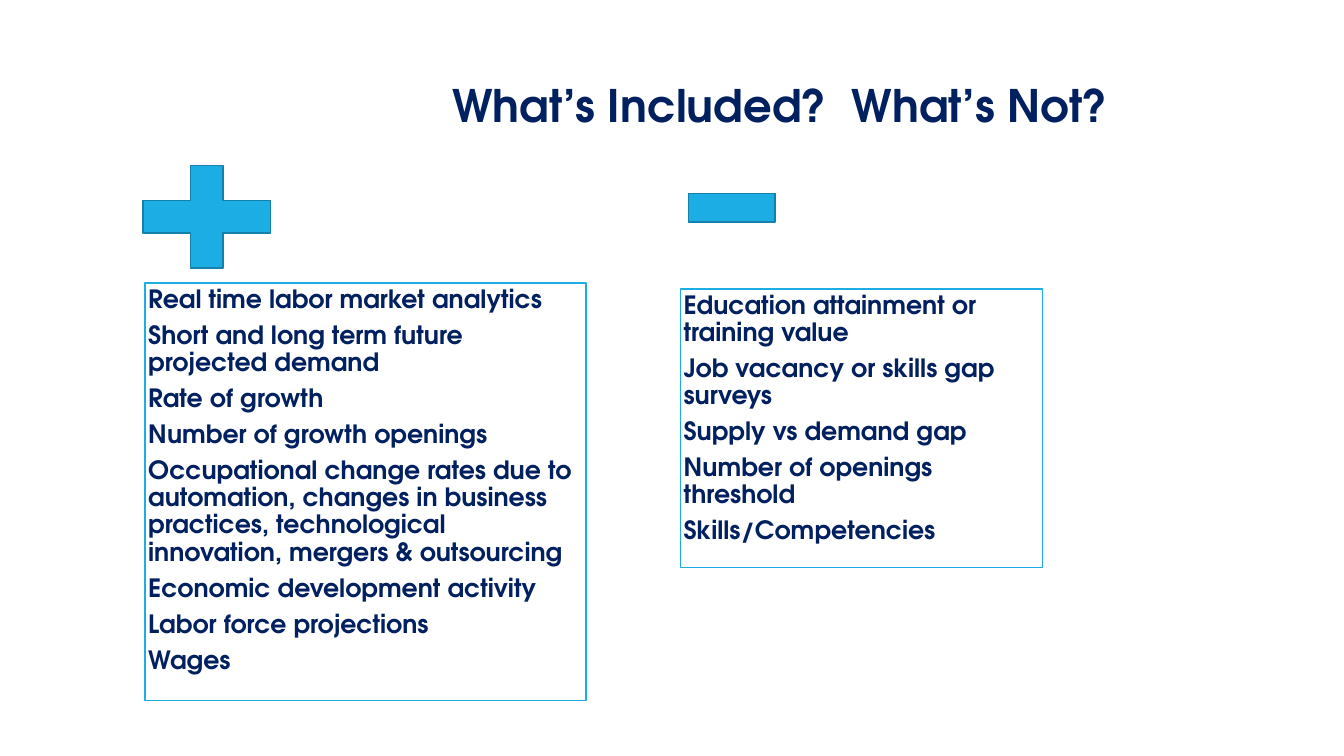
from dataclasses import dataclass

from pptx import Presentation
from pptx.dml.color import RGBColor
from pptx.enum.shapes import MSO_SHAPE
from pptx.enum.text import MSO_ANCHOR, PP_ALIGN
from pptx.util import Inches, Pt

PLUS, MINUS, RECT = MSO_SHAPE.MATH_PLUS, MSO_SHAPE.MATH_MINUS, MSO_SHAPE.RECTANGLE
TOP, LEFT = MSO_ANCHOR.TOP, PP_ALIGN.LEFT

INCLUDED = [
    "Real time labor market analytics",
    "Short and long term future projected demand",
    "Rate of growth",
    "Number of growth openings",
    "Occupational change rates due to automation, changes in business "
    "practices, technological innovation, mergers & outsourcing",
    "Economic development activity",
    "Labor force projections",
    "Wages",
]
NOT_INCLUDED = [
    "Education attainment or training value",
    "Job vacancy or skills gap surveys",
    "Supply vs demand gap",
    "Number of openings threshold",
    "Skills/Competencies",
]


@dataclass(frozen=True)
class Theme:
    font: str = "TeX Gyre Adventor"
    navy: RGBColor = RGBColor(0x00, 0x20, 0x60)
    blue: RGBColor = RGBColor(0x1C, 0xAD, 0xE4)
    edge: RGBColor = RGBColor(0x15, 0x80, 0xA9)
    title_size: float = 32
    body_size: float = 18
    sign_line: float = 1
    box_line: float = 1.25
    inset: float = 0.03
    line_spacing: float = 0.9
    space_after: float = 0.35


class SlideBuilder:
    def __init__(self, prs, theme):
        self.prs = prs
        self.theme = theme
        self.slide = prs.slides.add_slide(prs.slide_layouts[6])

    def place(self, x, y, w, h):
        width, height = self.prs.slide_width, self.prs.slide_height
        shares = ((x, width), (y, height), (w, width), (h, height))
        return [round(share * full / 100) for share, full in shares]

    def set_paragraph(self, p, text, size):
        p.text = text
        p.alignment = LEFT
        for r in p.runs:
            r.font.name = self.theme.font
            r.font.size = Pt(size)
            r.font.bold = True
            r.font.color.rgb = self.theme.navy

    def title(self, text, *area):
        tf = self.slide.shapes.add_textbox(*self.place(*area)).text_frame
        tf.word_wrap = True
        self.set_paragraph(tf.paragraphs[0], text, self.theme.title_size)

    def shape(self, kind, area, line_color, line_width):
        sp = self.slide.shapes.add_shape(kind, *self.place(*area))
        sp.shadow.inherit = False
        sp.line.color.rgb = line_color
        sp.line.width = Pt(line_width)
        return sp

    def sign(self, kind, *area):
        sp = self.shape(kind, area, self.theme.edge, self.theme.sign_line)
        sp.fill.solid()
        sp.fill.fore_color.rgb = self.theme.blue

    def list_box(self, items, *area):
        theme = self.theme
        sp = self.shape(RECT, area, theme.blue, theme.box_line)
        sp.fill.background()
        tf = sp.text_frame
        tf.word_wrap = True
        tf.vertical_anchor = TOP
        tf.margin_left = tf.margin_right = Inches(theme.inset)
        tf.margin_top = tf.margin_bottom = Inches(theme.inset)
        tf.text = "\n".join(items)
        for p, item in zip(tf.paragraphs, items):
            self.set_paragraph(p, item, theme.body_size)
            p.line_spacing = theme.line_spacing
            p.space_after = Pt(theme.body_size * theme.space_after)


def main():
    prs = Presentation()
    prs.slide_width, prs.slide_height = Inches(13.33), Inches(7.5)
    s = SlideBuilder(prs, Theme())
    s.title("What’s Included?  What’s Not?", 32.93, 9.6, 63.69, 8.53)
    s.sign(PLUS, 8.93, 19.47, 12.9, 18.4)
    s.sign(MINUS, 50.04, 19.47, 8.78, 16)
    s.list_box(INCLUDED, 10.8, 37.47, 32.78, 55.2)
    s.list_box(NOT_INCLUDED, 50.64, 38.27, 26.93, 36.8)
    prs.save("out.pptx")


if __name__ == "__main__":
    main()
